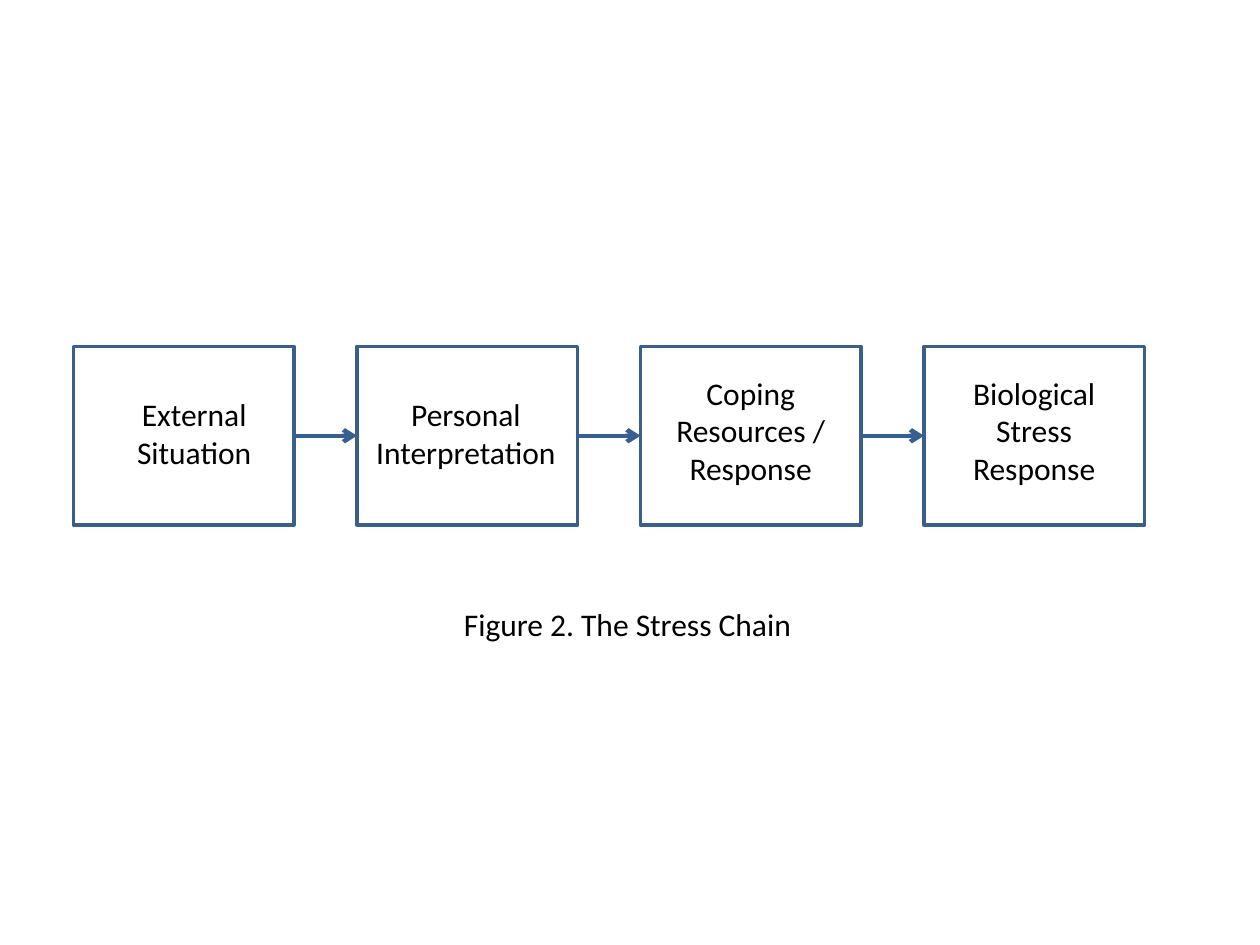
from pptx import Presentation
from pptx.dml.color import RGBColor
from pptx.enum.shapes import MSO_CONNECTOR, MSO_SHAPE
from pptx.enum.text import MSO_AUTO_SIZE, PP_ALIGN
from pptx.oxml.ns import qn
from pptx.util import Pt
from lxml.etree import SubElement

COLORS = {"border": "3A5F8C", "arrow": "376092", "text": "000000"}
TEXT_FORMAT = {"name": "Calibri", "size": Pt(18)}
STAGE_WIDTH, STAGE_GAP = 126, 36

# Paragraphs, then label box (left, top, width, height) within its stage
STAGES = [
    (["External", "Situation"], (12, 24, 114, 51)),
    (["Personal", "Interpretation"], (0, 24, 124.5, 51)),
    (["Coping Resources / Response"], (6, 12, 114, 73)),
    (["Biological Stress Response"], (12, 12, 102, 73)),
]


def rgb(role):
    return RGBColor.from_string(COLORS[role])


def style_line(line, role, width):
    line.color.rgb = rgb(role)
    line.width = Pt(width)


def add_label(slide, box, paragraphs, align):
    label = slide.shapes.add_textbox(*map(Pt, box)).text_frame
    label.word_wrap = True
    label.auto_size = MSO_AUTO_SIZE.SHAPE_TO_FIT_TEXT
    label.text = "\n".join(paragraphs)
    for paragraph in label.paragraphs:
        paragraph.alignment = align
        font = paragraph.runs[0].font
        for attribute, value in TEXT_FORMAT.items():
            setattr(font, attribute, value)
        font.color.rgb = rgb("text")


def add_stage(slide, box):
    stage = slide.shapes.add_shape(MSO_SHAPE.RECTANGLE, *map(Pt, box))
    stage.shadow.inherit = False
    stage.fill.background()
    style_line(stage.line, "border", 2)
    return stage


def add_arrow(slide, cause, effect):
    arrow = slide.shapes.add_connector(MSO_CONNECTOR.STRAIGHT, 0, 0, 0, 0)
    arrow.begin_connect(cause, 3)
    arrow.end_connect(effect, 1)
    style_line(arrow.line, "arrow", 2.5)
    SubElement(arrow.line._get_or_add_ln(), qn("a:tailEnd"), type="arrow")
    SubElement(arrow._element.spPr, qn("a:effectLst"))


def add_stress_chain(slide, left, top, height):
    lefts = [left + i * (STAGE_WIDTH + STAGE_GAP) for i in range(len(STAGES))]
    stages = [add_stage(slide, (x, top, STAGE_WIDTH, height)) for x in lefts]
    for cause, effect in zip(stages, stages[1:]):
        add_arrow(slide, cause, effect)
    for x, (paragraphs, (dx, dy, width, label_height)) in zip(lefts, STAGES):
        add_label(slide, (x + dx, top + dy, width, label_height),
                  paragraphs, PP_ALIGN.CENTER)


def add_caption(slide, left, top, width, height):
    add_label(slide, (left, top, width, height),
              ["Figure 2. The Stress Chain"], PP_ALIGN.LEFT)


def main():
    presentation = Presentation()
    presentation.slide_width, presentation.slide_height = Pt(720), Pt(540)
    slide = presentation.slides.add_slide(presentation.slide_layouts[6])
    add_stress_chain(slide, 42, 198, 102)
    add_caption(slide, 258, 342, 294, 29)
    presentation.save("out.pptx")


if __name__ == "__main__":
    main()
